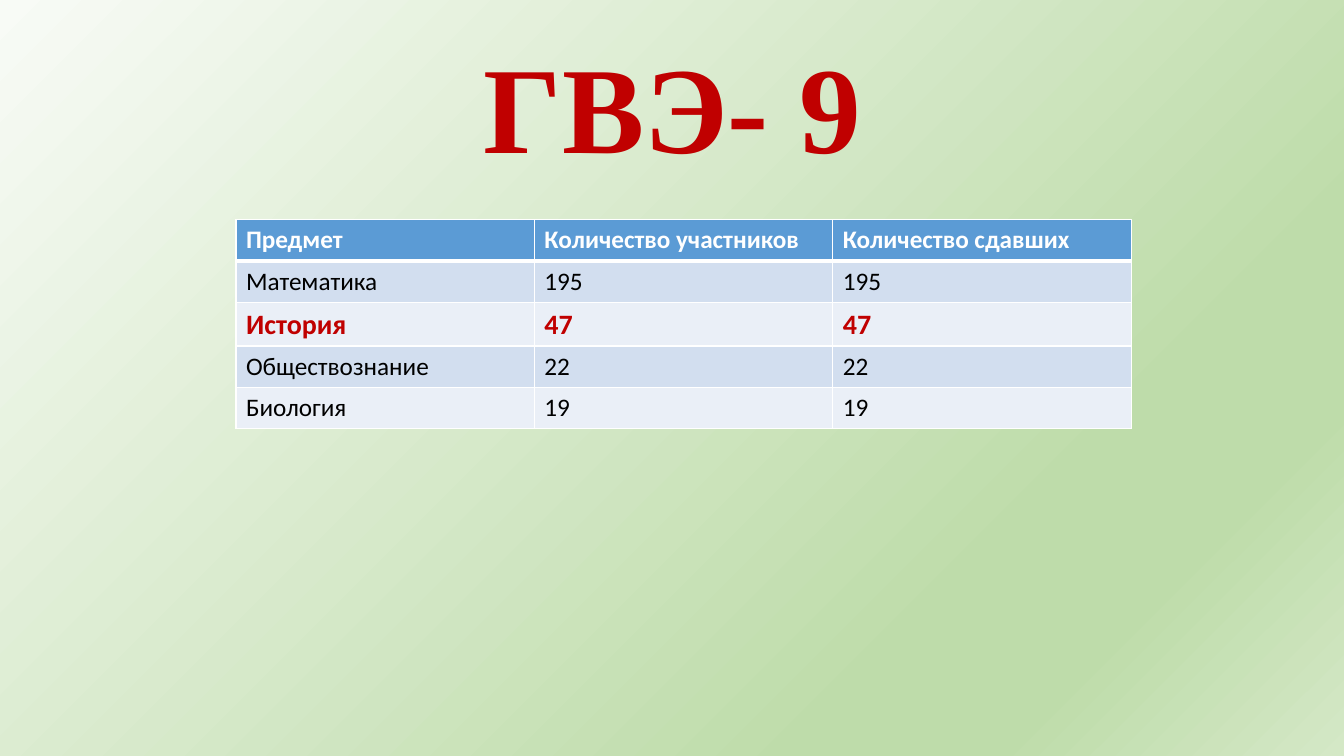
from pptx import Presentation
from pptx.dml.color import RGBColor
from pptx.enum.text import MSO_ANCHOR, PP_ALIGN
from pptx.oxml import parse_xml
from pptx.oxml.ns import nsdecls
from pptx.util import Inches, Pt

TITLE = "ГВЭ- 9"
RESULTS = [
    ("Предмет", "Количество участников", "Количество сдавших"),
    ("Математика", "195", "195"),
    ("История", "47", "47"),
    ("Обществознание", "22", "22"),
    ("Биология", "19", "19"),
]
HEADER_ROW, HIGHLIGHT_ROW = 0, 2
GRADIENT_STOPS = [(0, "F8FBF6"), (74, "BEDCAA"), (83, "BEDCAA"), (100, "D4E8C6")]

WHITE = RGBColor(0xFF, 0xFF, 0xFF)
BLACK = RGBColor(0x00, 0x00, 0x00)
RED = RGBColor(0xC0, 0x00, 0x00)
BLUE = RGBColor(0x5B, 0x9B, 0xD5)
BANDS = [RGBColor(0xEA, 0xEF, 0xF7), RGBColor(0xD2, 0xDE, 0xEF)]

SLIDE_WIDTH, SLIDE_HEIGHT = 13.33, 7.5
TITLE_BOX = (0.92, 0.4, 11.5, 1.45)
TABLE_LEFT, TABLE_TOP = 2.34, 2.18
COLUMN_WIDTH, ROW_HEIGHT = 2.96, 0.41
THIN, THICK = 1, 3


def write_text(frame, text, font="Calibri", size=18, color=BLACK, bold=False,
               align=PP_ALIGN.LEFT, spacing=1.0):
    paragraph = frame.paragraphs[0]
    paragraph.alignment = align
    paragraph.line_spacing = spacing
    run = paragraph.add_run()
    run.text = text
    run.font.name = font
    run.font.size = Pt(size)
    run.font.bold = bold
    run.font.color.rgb = color


def paint_background(slide):
    slide.background.fill.gradient()
    gradient = slide.element.xpath(".//p:bgPr/a:gradFill")[0]
    stops = "".join(
        f'<a:gs pos="{share * 1000}"><a:srgbClr val="{color}"/></a:gs>'
        for share, color in GRADIENT_STOPS
    )
    gradient.getparent().replace(gradient, parse_xml(
        f'<a:gradFill {nsdecls("a")} rotWithShape="1"><a:gsLst>{stops}</a:gsLst>'
        '<a:path path="circle"><a:fillToRect r="100000" b="100000"/></a:path></a:gradFill>'
    ))


def draw_borders(cell, top, bottom):
    properties = cell._tc.get_or_add_tcPr()
    widths = {"lnL": THIN, "lnR": THIN, "lnT": top, "lnB": bottom}
    for position, (side, width) in enumerate(widths.items()):
        properties.insert(position, parse_xml(
            f'<a:{side} {nsdecls("a")} w="{Pt(width)}"><a:solidFill>'
            f'<a:srgbClr val="{WHITE}"/></a:solidFill></a:{side}>'
        ))


def add_title(slide):
    box = slide.shapes.add_textbox(*map(Inches, TITLE_BOX))
    frame = box.text_frame
    frame.word_wrap = True
    frame.vertical_anchor = MSO_ANCHOR.MIDDLE
    write_text(frame, TITLE, font="Times New Roman", size=88, color=RED, bold=True,
               align=PP_ALIGN.CENTER, spacing=0.9)


def add_results(slide):
    rows, columns = len(RESULTS), len(RESULTS[0])
    table = slide.shapes.add_table(
        rows, columns, Inches(TABLE_LEFT), Inches(TABLE_TOP),
        Inches(columns * COLUMN_WIDTH), Inches(rows * ROW_HEIGHT),
    ).table
    formats = {
        HEADER_ROW: {"color": WHITE, "bold": True},
        HIGHLIGHT_ROW: {"size": 20, "color": RED, "bold": True},
    }
    for row, values in enumerate(RESULTS):
        for column, value in enumerate(values):
            cell = table.cell(row, column)
            cell.fill.solid()
            cell.fill.fore_color.rgb = BLUE if row == HEADER_ROW else BANDS[row % 2]
            draw_borders(cell, top=THICK if row == HEADER_ROW + 1 else THIN,
                         bottom=THICK if row == HEADER_ROW else THIN)
            write_text(cell.text_frame, value, **formats.get(row, {}))


def main():
    """Build the slide with the exam results table."""
    presentation = Presentation()
    presentation.slide_width = Inches(SLIDE_WIDTH)
    presentation.slide_height = Inches(SLIDE_HEIGHT)
    slide = presentation.slides.add_slide(presentation.slide_layouts[6])
    paint_background(slide)
    add_title(slide)
    add_results(slide)
    presentation.save("out.pptx")


if __name__ == "__main__":
    main()
